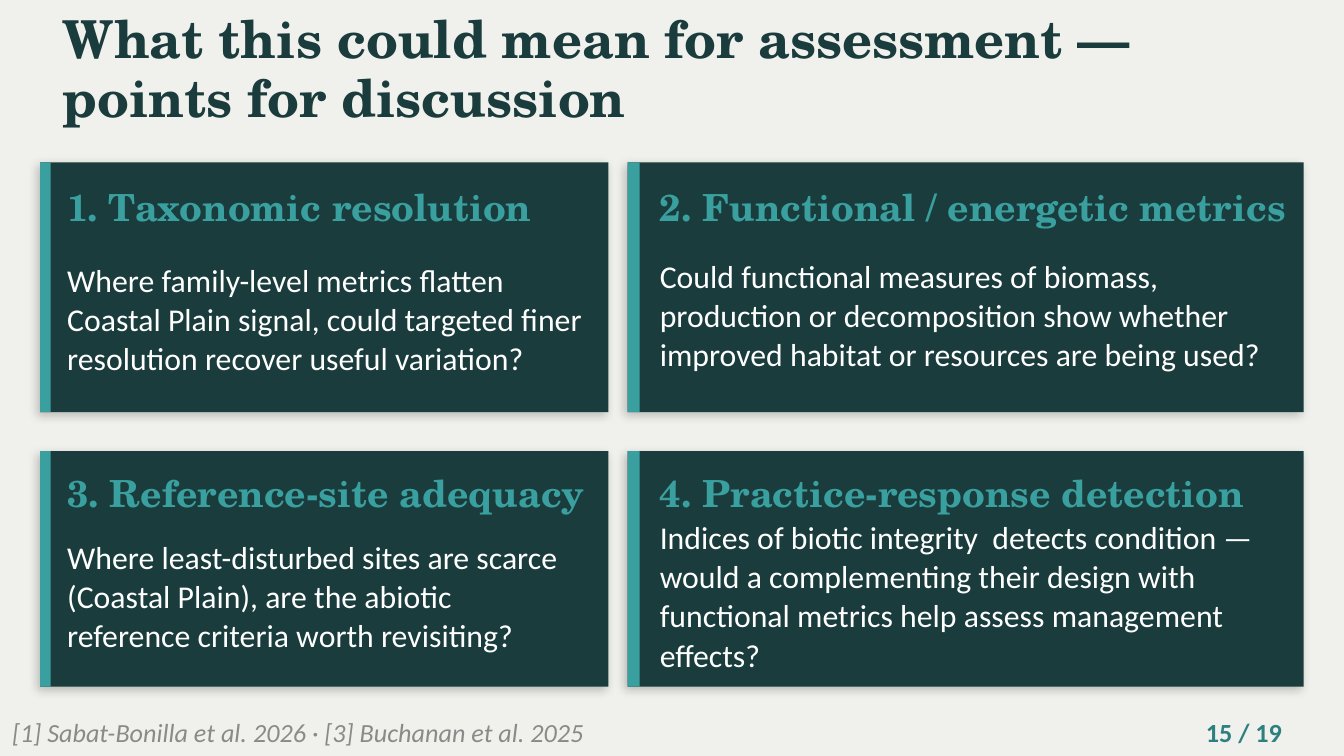
from lxml.etree import SubElement
from pptx import Presentation
from pptx.dml.color import RGBColor
from pptx.enum.shapes import MSO_SHAPE as Shape
from pptx.enum.text import MSO_ANCHOR as Anchor, PP_ALIGN as Align
from pptx.oxml.ns import qn
from pptx.util import Cm, Pt

COLORS = {
    "paper": "F0F0EC",
    "dark": "1A3C3C",
    "accent": "3A9F9F",
    "number": "2D8080",
    "white": "FFFFFF",
    "muted": "8A8A8A",
    "shadow": "000000",
}
SERIF, SANS = "TeX Gyre Schola", "Calibri"
FORMATS = {
    "title": {"name": SERIF, "size": Pt(28), "bold": True},
    "heading": {"name": SERIF, "size": Pt(20), "bold": True},
    "body": {"name": SANS, "size": Pt(17)},
    "source": {"name": SANS, "size": Pt(14), "italic": True},
    "number": {"name": SANS, "size": Pt(14), "bold": True},
}
INK = {"title": "dark", "heading": "accent", "body": "white", "source": "muted", "number": "number"}
SPACING = {"title": 0.95, "body": 1.03}

COLUMNS = [
    {"left": 0.76, "width": 10.74, "bar": 0.2, "indent": 0.51, "heading": 9.83},
    {"left": 11.86, "width": 12.78, "bar": 0.23, "indent": 0.61, "heading": 11.94},
]
ROWS = [
    {"top": 3.07, "height": 4.72, "heading": 1.67, "body": 2.44},
    {"top": 8.53, "height": 4.45, "heading": 1.57, "body": 2.34},
]
CARDS = [
    ("1. Taxonomic resolution",
     "Where family-level metrics flatten Coastal Plain signal, could targeted finer "
     "resolution recover useful variation?", 1.73, 10.06),
    ("2. Functional / energetic metrics",
     "Could functional measures of biomass, production or decomposition show whether "
     "improved habitat or resources are being used?", 1.65, 11.58),
    ("3. Reference-site adequacy",
     "Where least-disturbed sites are scarce (Coastal Plain), are the abiotic "
     "reference criteria worth revisiting?", 1.55, 9.73),
    ("4. Practice-response detection",
     "Indices of biotic integrity  detects condition — would a complementing their "
     "design with functional metrics help assess management effects?", 1.55, 11.58),
]


class SlideBuilder:
    def __init__(self, page):
        self.page = page
        self.paint(page.background.fill, "paper")

    def paint(self, fill, color):
        fill.solid()
        fill.fore_color.rgb = RGBColor.from_string(COLORS[color])

    def rectangle(self, left, top, width, height, color):
        box = self.page.shapes.add_shape(
            Shape.RECTANGLE, Cm(left), Cm(top), Cm(width), Cm(height))
        box.shadow.inherit = False
        self.paint(box.fill, color)
        box.line.fill.background()
        return box

    def shadow(self, box):
        effects = box._element.spPr.find(qn("a:effectLst"))
        outer = SubElement(effects, qn("a:outerShdw"), blurRad=str(Pt(5.2)),
                           dist=str(Pt(2.2)), dir="8100000", rotWithShape="0")
        color = SubElement(outer, qn("a:srgbClr"), val=COLORS["shadow"])
        SubElement(color, qn("a:alpha"), val="22000")

    def text(self, left, top, width, height, words, style,
             anchor=Anchor.MIDDLE, align=Align.LEFT):
        box = self.page.shapes.add_textbox(Cm(left), Cm(top), Cm(width), Cm(height))
        frame = box.text_frame
        layout = {"word_wrap": True, "vertical_anchor": anchor, "margin_left": 0,
                  "margin_top": 0, "margin_right": 0, "margin_bottom": 0}
        for key, value in layout.items():
            setattr(frame, key, value)
        para = frame.paragraphs[0]
        para.alignment = align
        para.line_spacing = SPACING.get(style)
        span = para.add_run()
        span.text = words
        for key, value in FORMATS[style].items():
            setattr(span.font, key, value)
        span.font.color.rgb = RGBColor.from_string(COLORS[INK[style]])

    def card(self, column, row, heading, body, offset, body_width):
        left, top, height = column["left"], row["top"], row["height"]
        self.shadow(self.rectangle(left, top, column["width"], height, "dark"))
        self.rectangle(left, top, column["bar"], height, "accent")
        text_left = left + column["indent"]
        self.text(text_left, top, column["heading"], row["heading"], heading, "heading")
        self.text(text_left, top + offset, body_width, row["body"], body, "body")


def main():
    deck = Presentation()
    deck.slide_width, deck.slide_height = Cm(25.4), Cm(14.29)
    builder = SlideBuilder(deck.slides.add_slide(deck.slide_layouts[6]))
    builder.text(1.19, 0.2, 23.04, 2.59,
                 "What this could mean for assessment — points for discussion",
                 "title", anchor=Anchor.TOP)
    for index, card in enumerate(CARDS):
        row, column = divmod(index, len(COLUMNS))
        builder.card(COLUMNS[column], ROWS[row], *card)
    builder.text(0.23, 13.44, 21.67, 0.79,
                 "[1] Sabat-Bonilla et al. 2026 · [3] Buchanan et al. 2025", "source")
    builder.text(22.12, 13.54, 2.11, 0.61, "15 / 19", "number", align=Align.RIGHT)
    deck.save("out.pptx")


if __name__ == "__main__":
    main()
